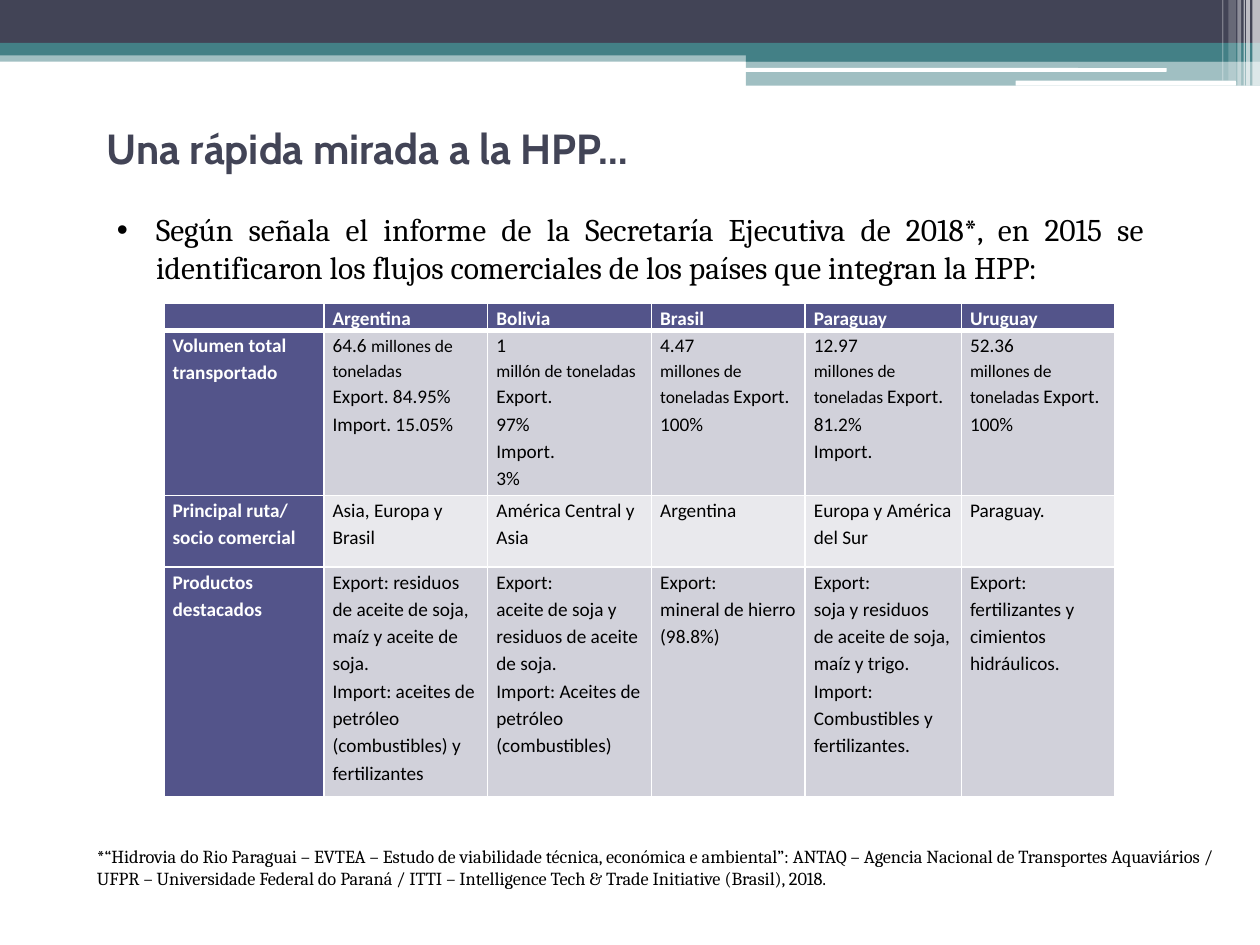
from lxml import etree
from pptx import Presentation
from pptx.dml.color import RGBColor
from pptx.enum.shapes import MSO_SHAPE
from pptx.enum.text import MSO_AUTO_SIZE, PP_ALIGN
from pptx.oxml.ns import qn
from pptx.util import Inches, Pt

RECTANGLE, ROUNDED = MSO_SHAPE.RECTANGLE, MSO_SHAPE.ROUNDED_RECTANGLE
GROW = MSO_AUTO_SIZE.SHAPE_TO_FIT_TEXT
JUSTIFY = PP_ALIGN.JUSTIFY

# The slide is a grid of 100 columns by 75 rows of square units
UNIT = Inches(10) // 100
SLIDE_COLUMNS, SLIDE_ROWS = 100, 75

COLORS = {
    "white": "FFFFFF",
    "black": "000000",
    "navy": "424456",
    "teal": "438086",
    "violet": "53548A",
    "band_dark": "D1D1DA",
    "band_light": "E9E9ED",
}

# Shape, left, top, width, height, color, opacity in percent
BANDS = [
    (RECTANGLE, 0, 4, 100, 0.9, "teal", 50),
    (RECTANGLE, 0, 0, 100, 3.4, "navy", 100),
    (RECTANGLE, 0, 3.4, 100, 1, "teal", 100),
    (RECTANGLE, 59.2, 3.9, 40.8, 1, "teal", 100),
    (RECTANGLE, 59.2, 4.8, 40.8, 2, "teal", 50),
    (ROUNDED, 59.1, 5.4, 33.5, 0.3, "white", 100),
    (ROUNDED, 80.6, 6.4, 17.5, 0.4, "white", 100),
]
# Left, width, height, opacity of the white stripes in the corner
STRIPES = [
    (99.4, 0.6, 6.8, 65),
    (98.9, 0.3, 6.8, 65),
    (98.7, 0.1, 6.8, 60),
    (98.2, 0.3, 6.8, 40),
    (97.5, 0.6, 6.4, 20),
    (97, 0.1, 6.4, 30),
]

TITLE = "Una rápida mirada a la HPP…"
STATEMENT = (
    "Según señala el informe de la Secretaría Ejecutiva de 2018*, en 2015 se "
    "identificaron los flujos comerciales de los países que integran la HPP:"
)
SOURCE_NOTE = (
    "*“Hidrovia do Rio Paraguai – EVTEA – Estudo de viabilidade técnica, "
    "económica e ambiental”: ANTAQ – Agencia Nacional de Transportes Aquaviários / "
    "UFPR – Universidade Federal do Paraná / ITTI – Intelligence Tech & Trade "
    "Initiative (Brasil), 2018."
)

# A line break starts a paragraph; text between bars is set smaller
TABLE = [
    ["", "Argentina", "Bolivia", "Brasil", "Paraguay", "Uruguay"],
    [
        "Volumen total transportado",
        "64.6 |millones de toneladas|\nExport. 84.95%\nImport. 15.05%",
        "1\n|millón de toneladas|\nExport.\n97%\nImport.\n3%",
        "4.47\n|millones de toneladas |Export.\n100%",
        "12.97\n|millones de toneladas |Export.\n81.2%\nImport.",
        "52.36\n|millones de toneladas |Export.\n100%",
    ],
    [
        "Principal ruta/ socio comercial",
        "Asia, Europa y Brasil",
        "América Central y Asia",
        "Argentina",
        "Europa y América del Sur",
        "Paraguay.",
    ],
    [
        "Productos destacados",
        "Export: residuos de aceite de soja, maíz y aceite de soja.\n"
        "Import: aceites de petróleo (combustibles) y fertilizantes",
        "Export:\naceite de soja y residuos de aceite de soja.\n"
        "Import: Aceites de petróleo (combustibles)",
        "Export:\nmineral de hierro (98.8%)",
        "Export:\nsoja y residuos de aceite de soja, maíz y trigo.\n"
        "Import: Combustibles y fertilizantes.",
        "Export: fertilizantes y cimientos hidráulicos.",
    ],
]
COLUMN_WIDTHS = [12.7, 13, 13, 12.2, 12.4, 12.2]
ROW_HEIGHTS = [1.8, 13.1, 5.7, 18.2]


def units(*values):
    return [round(value * UNIT) for value in values]


def rgb(color):
    return RGBColor.from_string(COLORS[color])


def set_all(target, values):
    for name, value in values.items():
        setattr(target, name, value)


def paint(fill, color, opacity=100):
    fill.solid()
    fill.fore_color.rgb = rgb(color)
    if opacity < 100:
        color_node = fill._xPr.find(qn("a:solidFill"))[0]
        etree.SubElement(color_node, qn("a:alpha"), val=str(opacity * 1000))


def add_run(paragraph, text, font_name, size, color, bold=False):
    run = paragraph.add_run()
    run.text = text
    set_all(run.font, {"name": font_name, "size": Pt(size), "bold": bold})
    run.font.color.rgb = rgb(color)


def add_band(slide, kind, left, top, width, height, color, opacity):
    shape = slide.shapes.add_shape(kind, *units(left, top, width, height))
    shape.shadow.inherit = False
    shape.line.fill.background()
    paint(shape.fill, color, opacity)


def add_text(slide, box, text, *font, wrap=True):
    frame = slide.shapes.add_textbox(*units(*box)).text_frame
    set_all(frame, {"word_wrap": wrap, "auto_size": GROW})
    paragraph = frame.paragraphs[0]
    add_run(paragraph, text, *font)
    return paragraph


def add_bullet(paragraph, indent):
    paragraph.alignment = JUSTIFY
    properties = paragraph._p.get_or_add_pPr()
    properties.set("marL", str(indent))
    properties.set("indent", str(-indent))
    etree.SubElement(properties, qn("a:buFont"), typeface="Arial")
    etree.SubElement(properties, qn("a:buChar"), char="•")


def add_borders(cell, widths):
    properties = cell._tc.get_or_add_tcPr()
    for side, width in widths.items():
        line = etree.SubElement(properties, qn(f"a:ln{side}"), w=str(Pt(width)))
        fill = etree.SubElement(line, qn("a:solidFill"))
        etree.SubElement(fill, qn("a:srgbClr"), val=COLORS["white"])


def fill_cell(cell, text, color, bold):
    frame = cell.text_frame
    for index, line in enumerate(text.split("\n")):
        paragraph = frame.add_paragraph() if index else frame.paragraphs[0]
        paragraph.line_spacing = 1.15
        for position, part in enumerate(line.split("|")):
            if part:
                add_run(paragraph, part, "Calibri", 10 if position % 2 else 11, color, bold)
    if not text:
        # Keeps the empty corner cell from stretching its row
        etree.SubElement(frame.paragraphs[0]._p, qn("a:endParaRPr"), sz="1100")


def add_trade_table(slide, left, top):
    box = units(left, top, sum(COLUMN_WIDTHS), sum(ROW_HEIGHTS))
    table = slide.shapes.add_table(len(TABLE), len(TABLE[0]), *box).table
    for column, width in zip(table.columns, units(*COLUMN_WIDTHS)):
        column.width = width
    for row, height in zip(table.rows, units(*ROW_HEIGHTS)):
        row.height = height
    side_margin = Inches(0.07)
    margins = {"margin_left": side_margin, "margin_right": side_margin,
               "margin_top": 0, "margin_bottom": 0}
    for r, texts in enumerate(TABLE):
        for c, text in enumerate(texts):
            cell = table.cell(r, c)
            heading = r == 0 or c == 0
            set_all(cell, margins)
            add_borders(cell, {"L": 1, "R": 1, "T": 3 if r == 1 else 1, "B": 3 if r == 0 else 1})
            paint(cell.fill, "violet" if heading else "band_dark" if r % 2 else "band_light")
            fill_cell(cell, text, "white" if heading else "black", heading)


def main():
    presentation = Presentation()
    set_all(presentation, {"slide_width": SLIDE_COLUMNS * UNIT,
                           "slide_height": SLIDE_ROWS * UNIT})
    slide = presentation.slides.add_slide(presentation.slide_layouts[6])

    # Header decoration
    for band in BANDS:
        add_band(slide, *band)
    for left, width, height, opacity in STRIPES:
        add_band(slide, RECTANGLE, left, 0, width, height, "white", opacity)

    # Texts
    statement = add_text(slide, (8.3, 16.2, 83.5, 7), STATEMENT, "Cambria", 18, "black")
    add_bullet(statement, Inches(0.31))
    add_text(slide, (6.7, 66.6, 91.3, 4.7), SOURCE_NOTE, "Cambria", 10.5, "black")
    add_text(slide, (7.5, 9.2, 48, 5), TITLE, "Cabin", 24, "navy", True, wrap=False)

    # Trade flows by country
    add_trade_table(slide, 13, 24.1)

    presentation.save("out.pptx")


if __name__ == "__main__":
    main()
